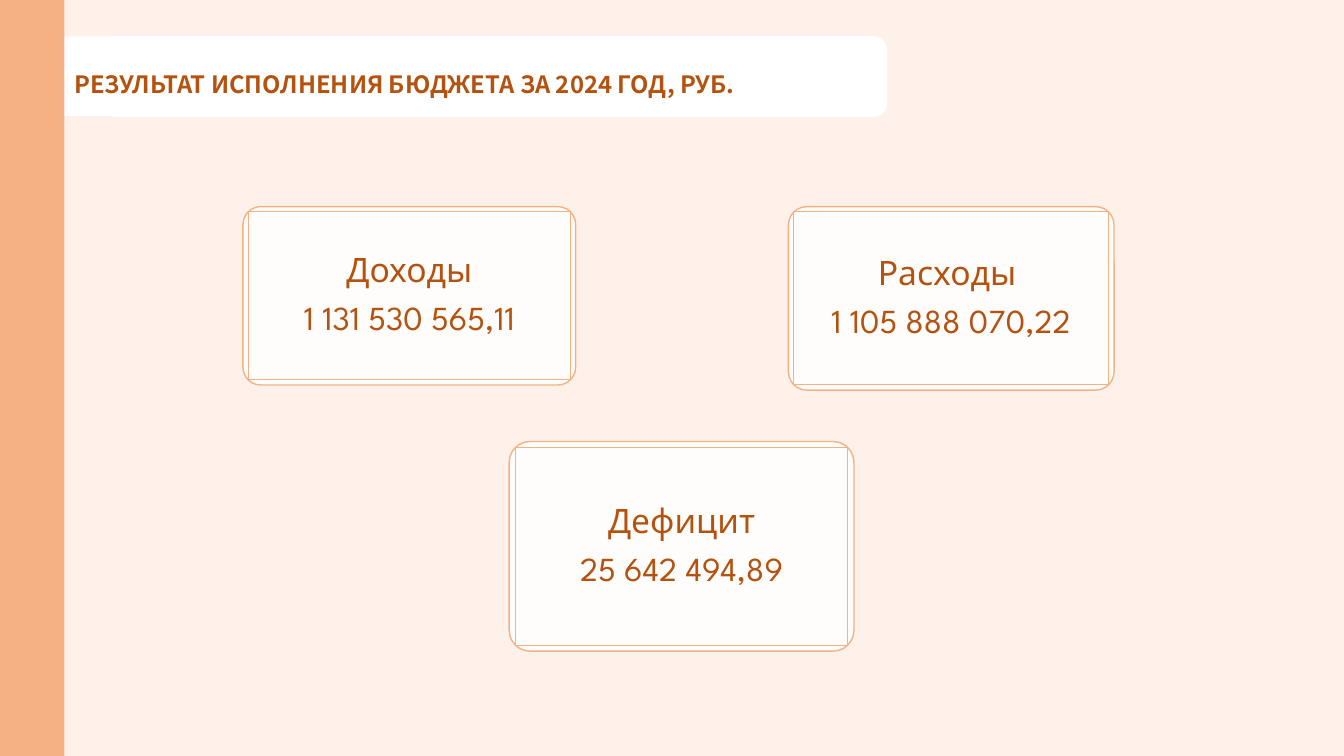
from lxml import etree
from pptx import Presentation
from pptx.dml.color import RGBColor
from pptx.enum import shapes, text
from pptx.oxml.ns import qn
from pptx.util import Inches, Pt

TITLE = "РЕЗУЛЬТАТ ИСПОЛНЕНИЯ БЮДЖЕТА ЗА 2024 ГОД, РУБ."
CARDS = [  # label, amount, (left, top, width, height)
    ("Доходы", "1 131 530 565,11", (2.41, 2.05, 3.3, 1.77)),
    ("Расходы ", "1 105 888 070,22", (7.82, 2.05, 3.23, 1.82)),
    ("Дефицит", "25 642 494,89", (5.05, 4.38, 3.42, 2.08)),
]
WIDE, HIGH = 13.33, 7.5
CORNER = 0.1


class Theme:
    back = RGBColor.from_string("FDF1EA")
    peach = RGBColor.from_string("F4B183")
    white = RGBColor.from_string("FFFFFF")
    ink = RGBColor.from_string("B45210")
    head_font, head_size = "Noto Sans CJK JP", Pt(17)
    card_font, card_size = "League Spartan", Pt(24)


def paint(shape, color):
    shape.fill.solid()
    shape.fill.fore_color.rgb = color


def add_box(owner, kind, place, fill=None, line=None):
    box = owner.add_shape(kind, *map(Inches, place))
    box.shadow.inherit = False
    if fill is None:
        box.fill.background()
    else:
        paint(box, fill)
    if line is None:
        box.line.fill.background()
    else:
        box.line.color.rgb = Theme.peach
        box.line.width = Pt(line)
    return box


def style(run, font, size, bold=False):
    run.font.name, run.font.size, run.font.bold = font, size, bold
    run.font.color.rgb = Theme.ink


def set_alpha(shape, percent):
    color = shape.fill._xPr.find(qn("a:solidFill"))[0]
    etree.SubElement(color, qn("a:alpha")).set("val", str(percent * 1000))


def add_card(slide, label, amount, place):
    """Group a rounded panel with a text frame that touches its corner arcs."""
    left, top, width, height = place
    group = slide.shapes.add_group_shape().shapes
    panel = add_box(group, ROUND, place, Theme.white, 1)
    panel.adjustments[0] = CORNER
    set_alpha(panel, 90)
    gap = CORNER * height * 0.29
    inner = (left + gap, top + gap, width - 2 * gap, height - 2 * gap)
    frame = add_box(group, RECT, inner, line=0.75).text_frame
    frame.margin_left = frame.margin_right = Inches(0.18)
    frame.margin_top = frame.margin_bottom = Inches(0.18)
    frame.vertical_anchor = text.MSO_ANCHOR.MIDDLE
    frame.word_wrap = True
    frame.text = f"{label}\n{amount}"
    for para in frame.paragraphs:
        para.alignment = text.PP_ALIGN.CENTER
        para.line_spacing = 0.9
        para.space_after = Pt(8.4)
        style(para.runs[0], Theme.card_font, Theme.card_size)


def add_title(slide):
    title = slide.shapes.title
    title.left, title.top = Inches(0.64), Inches(0.36)
    title.width, title.height = Inches(7.77), Inches(0.79)
    paint(title, Theme.white)
    frame = title.text_frame
    frame.text = TITLE
    frame.word_wrap = True
    frame.auto_size = text.MSO_AUTO_SIZE.NONE
    frame.vertical_anchor = text.MSO_ANCHOR.TOP
    para = frame.paragraphs[0]
    para.alignment = text.PP_ALIGN.LEFT
    para.line_spacing = 2.0
    para.space_before = Pt(0)
    style(para.runs[0], Theme.head_font, Theme.head_size, True)
    slide.shapes._spTree.append(title._element)  # in front of the tab


RECT = shapes.MSO_SHAPE.RECTANGLE
ROUND = shapes.MSO_SHAPE.ROUNDED_RECTANGLE


def main():
    deck = Presentation()
    deck.slide_width, deck.slide_height = Inches(WIDE), Inches(HIGH)
    slide = deck.slides.add_slide(deck.slide_layouts[5])
    paint(slide.background, Theme.back)
    add_box(slide.shapes, RECT, (0, 0, 0.64, HIGH), Theme.peach)
    add_box(slide.shapes, ROUND, (1.01, 0.36, 7.79, 0.8), Theme.white)
    add_title(slide)
    for card in CARDS:
        add_card(slide, *card)
    deck.save("out.pptx")


if __name__ == "__main__":
    main()
